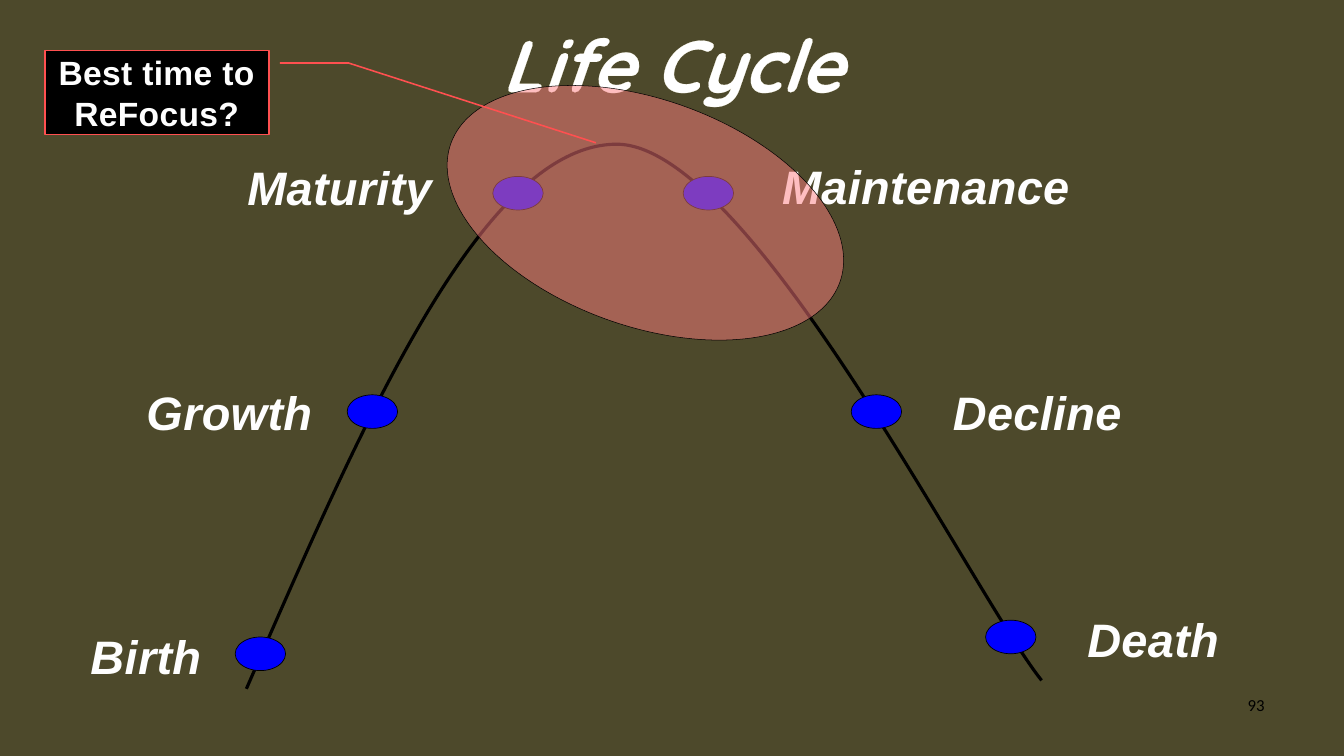
"""Build the Life Cycle slide: a curve with six stages and a callout at its peak."""
import lxml.etree
import pptx
import pptx.dml.color
import pptx.enum.shapes
import pptx.enum.text
import pptx.oxml.ns
import pptx.util

Pt = pptx.util.Pt
qn = pptx.oxml.ns.qn
Kind = pptx.enum.shapes.MSO_SHAPE
Align = pptx.enum.text.PP_ALIGN
Anchor = pptx.enum.text.MSO_ANCHOR
Fit = pptx.enum.text.MSO_AUTO_SIZE

theme = {
    "ground": "4D492B", "title": "FFFFFF", "glow": "F7F4E4", "label": "FEFEFE",
    "edge": "202086", "ink": "000000", "dot": "0000FF", "zone": "FF7C80", "call": "FF5050",
    "title_size": 105, "label_size": 67, "call_size": 48, "page_size": 24,
}


def write(shape, text, size, color, font="Arial", bold=True, italic=False, align=Align.LEFT,
          anchor=Anchor.TOP, wrap=True, fit=Fit.NONE, edge=None, width=1, space=0, shade=False):
    frame = shape.text_frame
    frame.margin_left = frame.margin_right = Pt(17.28)
    frame.margin_top = frame.margin_bottom = Pt(8.64)
    frame.word_wrap, frame.auto_size, frame.vertical_anchor = wrap, fit, anchor
    para = frame.paragraphs[0]
    para.alignment = align
    run = para.add_run()
    run.text = text
    style = run.font
    style.name, style.size, style.bold, style.italic = font, Pt(size), bold, italic
    style.color.rgb = pptx.dml.color.RGBColor.from_string(theme[color])
    props = style.fill._xPr
    if space:
        props.set("spc", str(round(space * 100)))
    if edge:
        line = lxml.etree.Element(qn("a:ln"), w=str(Pt(width)))
        fill = lxml.etree.SubElement(line, qn("a:solidFill"))
        lxml.etree.SubElement(fill, qn("a:srgbClr"), val=theme[edge])
        props.insert(0, line)
    if shade:
        effect = lxml.etree.Element(qn("a:effectLst"))
        shadow = lxml.etree.SubElement(effect, qn("a:outerShdw"), blurRad="38100",
                                       dist="38100", dir="2700000")
        lxml.etree.SubElement(shadow, qn("a:srgbClr"), val=theme["edge"])
        props.find(qn("a:solidFill")).addnext(effect)


def paint(shape, fill, line, width):
    shape.shadow.inherit = False
    if fill:
        shape.fill.solid()
        shape.fill.fore_color.rgb = pptx.dml.color.RGBColor.from_string(theme[fill])
    else:
        shape.fill.background()
    shape.line.color.rgb = pptx.dml.color.RGBColor.from_string(theme[line])
    shape.line.width = Pt(width)


deck = pptx.Presentation()
deck.slide_width, deck.slide_height = Pt(1920), Pt(1080)
slide = deck.slides.add_slide(deck.slide_layouts[6])
slide.background.fill.solid()
slide.background.fill.fore_color.rgb = pptx.dml.color.RGBColor.from_string(theme["ground"])
shapes = slide.shapes

page = shapes.add_textbox(Pt(1376), Pt(984), Pt(448), Pt(75))
write(page, "93", theme["page_size"], "ink", font="Calibri", bold=False,
      align=Align.RIGHT, wrap=False)

title = shapes.add_textbox(Pt(144), Pt(0), Pt(1632), Pt(180))
write(title, "Life Cycle", theme["title_size"], "title", font="Quicksand", italic=True,
      align=Align.CENTER, anchor=Anchor.MIDDLE, edge="glow", width=2.48)

pen = shapes.build_freeform(Pt(352), Pt(984), scale=1.0)
bends = [(521, 596), (690, 208), (880, 206), (1069, 204), (1387, 845), (1488, 972)]
pen.add_line_segments([(Pt(x), Pt(y)) for x, y in bends], close=False)
curve = pen.convert_to_shape()
paint(curve, None, "ink", 4.5)
steps = list(curve._element.iter(qn("a:lnTo")))
for start in range(0, len(steps), 3):
    cubic = lxml.etree.Element(qn("a:cubicBezTo"))
    steps[start].addprevious(cubic)
    for step in steps[start:start + 3]:
        cubic.append(step[0])
        step.getparent().remove(step)

stages = [
    ("Birth", 112, 888, 211, 336, 910),
    ("Growth", 192, 540, 290, 496, 564),
    ("Maturity", 336, 218, 318, 704, 252),
    ("Maintenance", 1100, 216, 466, 976, 252),
    ("Decline", 1344, 540, 294, 1216, 564),
    ("Death", 1536, 864, 241, 1408, 886),
]
for name, left, top, width, x, y in stages:
    label = shapes.add_textbox(Pt(left), Pt(top), Pt(width), Pt(99))
    write(label, name, theme["label_size"], "label", italic=True, wrap=False,
          fit=Fit.SHAPE_TO_FIT_TEXT, edge="edge", space=0.5, shade=True)
    dot = shapes.add_shape(Kind.OVAL, Pt(x), Pt(y), Pt(72), Pt(48))
    paint(dot, "dot", "ink", 1)

zone = shapes.add_shape(Kind.OVAL, Pt(627), Pt(142), Pt(590), Pt(324))
zone.rotation = 19.6
paint(zone, "zone", "ink", 0.75)
tint = zone._element.spPr.find(qn("a:solidFill"))[0]
lxml.etree.SubElement(tint, qn("a:alpha"), val="49000")

call = shapes.add_shape(Kind.LINE_CALLOUT_2, Pt(64), Pt(72), Pt(320), Pt(120))
for index, value in enumerate([0.15, 1.05, 0.15, 1.356, 1.1, 2.46]):
    call.adjustments[index] = value
paint(call, "ink", "call", 2.25)
write(call, "Best time to ReFocus?", theme["call_size"], "label", align=Align.CENTER,
      anchor=Anchor.MIDDLE, edge="edge", space=0.5, shade=True)

deck.save("out.pptx")
